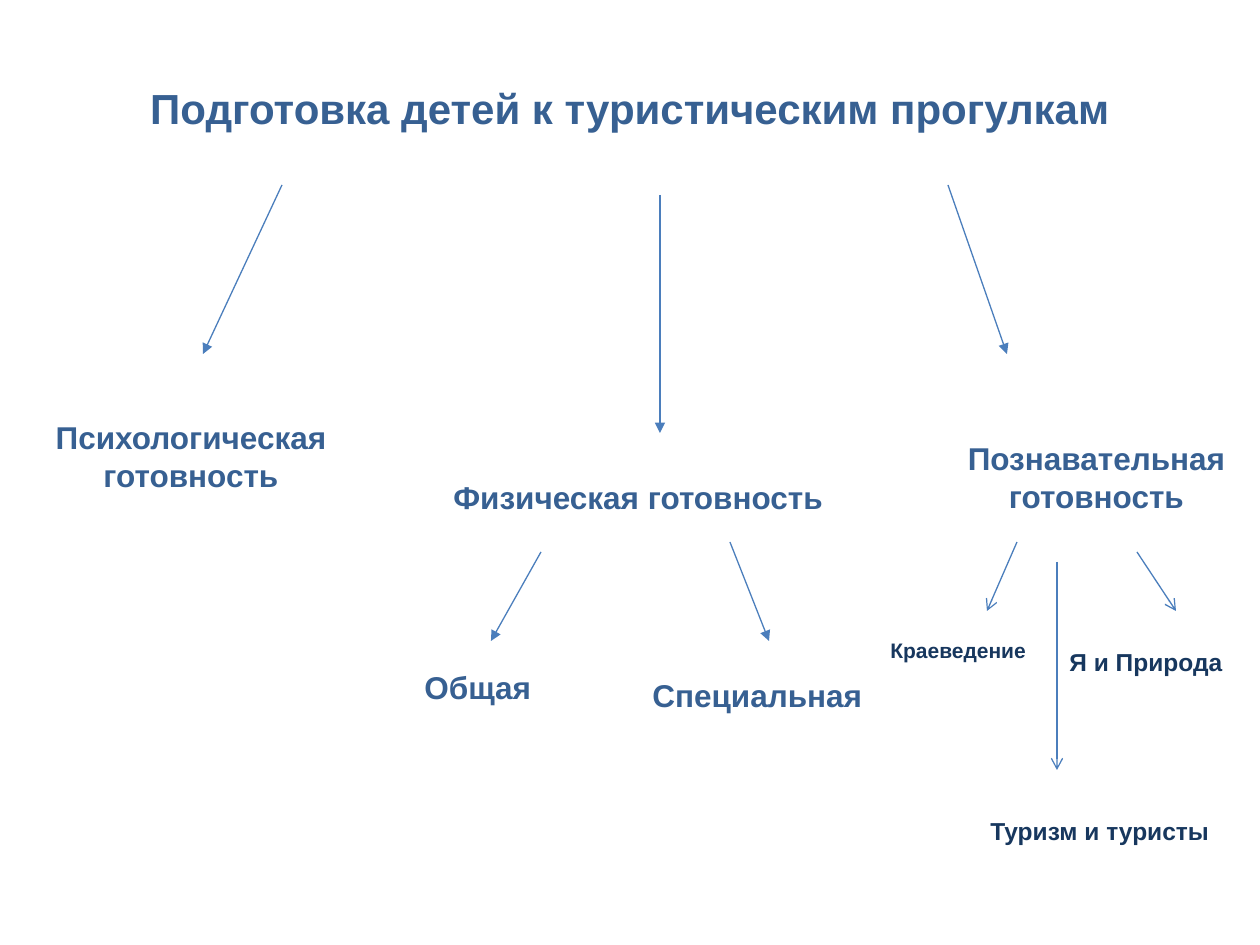
import pptx
import pptx.dml.color
import pptx.enum.dml
import pptx.enum.shapes
import pptx.enum.text
import pptx.oxml.ns
import pptx.util
from lxml import etree

ALIGN = pptx.enum.text.PP_ALIGN
FIT = pptx.enum.text.MSO_AUTO_SIZE

# Content: wording, (left, top, width, height) in px
TITLE = ("Подготовка детей к туристическим прогулкам", (63, 76, 1134, 769))
# name, place, centred and wrapped or on one line
BRANCHES = [
    ("Психологическая готовность", (39, 412, 304, 89), True),
    ("Физическая готовность", (441, 472, 399, 50), False),
    ("Познавательная готовность", (948, 433, 297, 89), True),
    ("Общая", (412, 662, 134, 50), False),
    ("Специальная", (640, 670, 237, 50), False),
]
# topic, place, type size name, wrapped
TOPICS = [
    ("Краеведение", (878, 631, 169, 38), "small", True),
    ("Я и Природа", (1057, 641, 179, 43), "topic", False),
    ("Туризм и туристы", (978, 810, 318, 43), "topic", True),
]
# Arrows by head type: start x, start y, end x, end y in px
ARROWS = {
    "triangle": [
        (282, 185, 203, 354),
        (660, 195, 660, 433),
        (948, 185, 1007, 354),
        (541, 552, 491, 641),
        (730, 542, 769, 641),
    ],
    "arrow": [
        (1017, 542, 987, 611),
        (1137, 552, 1176, 611),
        (1057, 562, 1057, 770),
    ],
}

THEME = {
    "font": "Arial",
    "heading": "376092",
    "detail": "17375E",
    "line": "4B7EBC",
    "line_width": 0.75,
    "sizes": {"title": 24, "branch": 18, "topic": 14, "small": 12},
}
SCALE = 914400 / 126


def px(length):
    return pptx.util.Emu(round(length * SCALE))


def colour(name):
    return pptx.dml.color.RGBColor.from_string(THEME[name])


def add_label(page, text, place, size, tint, centred=False, wrap=True, before=0):
    box = page.shapes.add_textbox(*map(px, place))
    frame = box.text_frame
    frame.word_wrap = wrap
    frame.auto_size = FIT.NONE if size == "title" else FIT.SHAPE_TO_FIT_TEXT
    para = frame.paragraphs[0]
    para.alignment = ALIGN.CENTER if centred else ALIGN.LEFT
    para.space_before = pptx.util.Pt(before)
    span = para.add_run()
    span.text = text
    span.font.name = THEME["font"]
    span.font.size = pptx.util.Pt(THEME["sizes"][size])
    span.font.bold = True
    span.font.color.rgb = colour(tint)


def add_arrow(page, ends, head):
    kind = pptx.enum.shapes.MSO_CONNECTOR.STRAIGHT
    arrow = page.shapes.add_connector(kind, *map(px, ends))
    arrow.line.color.rgb = colour("line")
    arrow.line.width = pptx.util.Pt(THEME["line_width"])
    qn = pptx.oxml.ns.qn
    properties = arrow.element.spPr
    etree.SubElement(properties.find(qn("a:ln")), qn("a:tailEnd"), type=head)
    etree.SubElement(properties, qn("a:effectLst"))


def main():
    deck = pptx.Presentation()
    deck.slide_width, deck.slide_height = px(1260), px(945)
    page = deck.slides.add_slide(deck.slide_layouts[6])

    # Title
    add_label(page, *TITLE, "title", "heading", centred=True, before=2.4)

    # Arrows between levels
    for head, arrows in ARROWS.items():
        for ends in arrows:
            add_arrow(page, ends, head)

    # Kinds of readiness and their topics
    for text, place, centred in BRANCHES:
        add_label(page, text, place, "branch", "heading", centred, wrap=centred)
    for text, place, size, wrap in TOPICS:
        add_label(page, text, place, size, "detail", wrap=wrap)

    deck.save("out.pptx")


if __name__ == "__main__":
    main()
